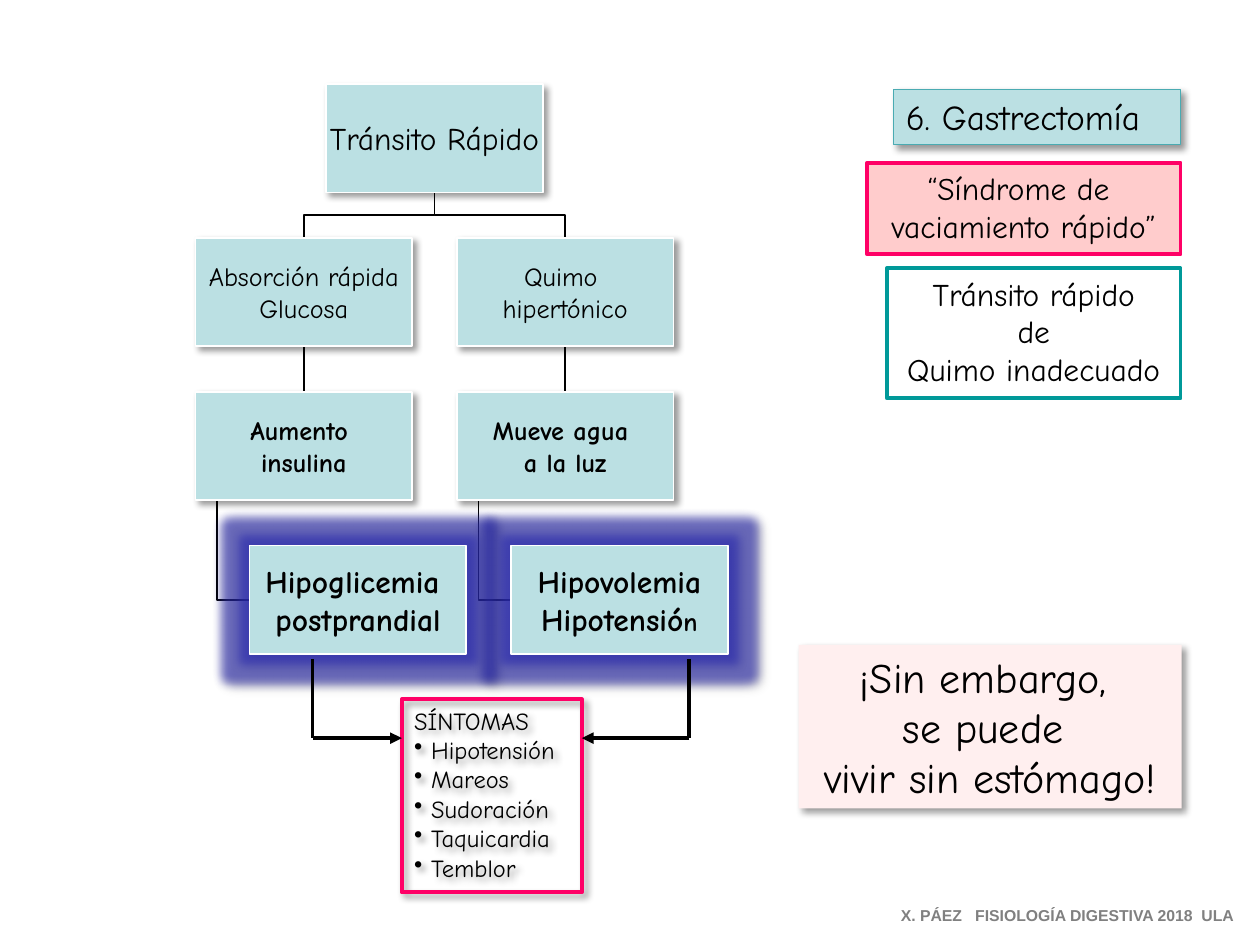
from dataclasses import dataclass
from typing import Optional

from lxml.etree import SubElement
from pptx import Presentation
from pptx.dml.color import RGBColor
from pptx.enum.shapes import MSO_CONNECTOR as Connector, MSO_SHAPE as Preset
from pptx.enum.text import MSO_ANCHOR as Anchor, MSO_AUTO_SIZE as AutoSize, PP_ALIGN as Align
from pptx.oxml.ns import qn
from pptx.util import Cm, Pt


@dataclass(frozen=True)
class Theme:
    font: str = "Comic Neue"
    footer_font: str = "Arial"
    ink: str = "000000"
    white: str = "FFFFFF"
    aqua: str = "BBE0E3"
    aqua_edge: str = "4AABB2"
    teal: str = "009999"
    pink: str = "FF0066"
    rose: str = "FFCCCC"
    blush: str = "FFEFEF"
    glow: str = "2B2BB0"
    grey: str = "808080"
    closing: float = 24
    title: float = 20
    heading: float = 18
    body: float = 15
    symptom: float = 14
    footer: float = 9
    thin: float = 1
    thick: float = 2.25


THEME = Theme()


@dataclass(frozen=True)
class Box:
    """A framed text; lengths in centimetres."""
    left: float
    top: float
    width: float
    height: float
    lines: tuple[str, ...]
    size: float
    fill: Optional[str] = None
    edge: Optional[str] = None
    edge_width: float = THEME.thick
    align: Align = Align.CENTER
    bold: bool = False
    shadow: bool = False
    glow: bool = False
    node: bool = False


def color(value: str) -> RGBColor:
    return RGBColor.from_string(value)


def add_effects(shape, shadow: bool = False, glow: bool = False) -> None:
    properties = shape._element.spPr
    effects = properties.find(qn("a:effectLst"))
    if effects is None:
        effects = SubElement(properties, qn("a:effectLst"))

    def add_effect(tag: str, value: str, alpha: int, **attributes) -> None:
        effect = SubElement(effects, qn(tag), {k: str(v) for k, v in attributes.items()})
        tint = SubElement(effect, qn("a:srgbClr"), val=value)
        SubElement(tint, qn("a:alpha"), val=str(alpha * 1000))

    if glow:
        add_effect("a:glow", THEME.glow, 60, rad=Pt(11))
    if shadow:
        add_effect("a:outerShdw", THEME.ink, 40, blurRad=Pt(4), dist=Pt(3),
                   dir=45 * 60000, algn="tl", rotWithShape=0)


def format_font(font, size: float, bold: bool = False,
                name: str = THEME.font, ink: str = THEME.ink) -> None:
    font.name, font.size, font.bold = name, Pt(size), bold
    font.color.rgb = color(ink)


def add_box(slide, box: Box):
    shape = slide.shapes.add_shape(
        Preset.RECTANGLE, Cm(box.left), Cm(box.top), Cm(box.width), Cm(box.height))
    if box.fill:
        shape.fill.solid()
        shape.fill.fore_color.rgb = color(box.fill)
    else:
        shape.fill.background()
    if box.edge:
        shape.line.color.rgb = color(box.edge)
        shape.line.width = Pt(box.edge_width)
    else:
        shape.line.fill.background()
    shape.shadow.inherit = False
    add_effects(shape, box.shadow, box.glow)

    frame = shape.text_frame
    frame.text = "\n".join(box.lines)
    frame.word_wrap = box.node
    frame.vertical_anchor = Anchor.MIDDLE if box.node else Anchor.TOP
    if box.node:
        frame.margin_left = frame.margin_right = Cm(0.03)
        frame.margin_top = frame.margin_bottom = Cm(0.03)
    else:
        frame.auto_size = AutoSize.SHAPE_TO_FIT_TEXT
    for paragraph in frame.paragraphs:
        paragraph.alignment = box.align
        for run in paragraph.runs:
            format_font(run.font, box.size, box.bold)
    return shape


def add_line(slide, start: tuple, end: tuple, width: float, arrow: bool = False) -> None:
    line = slide.shapes.add_connector(Connector.STRAIGHT, *map(Cm, start + end))
    line.line.color.rgb = color(THEME.ink)
    line.line.width = Pt(width)
    if arrow:
        SubElement(line.line._get_or_add_ln(), qn("a:tailEnd"), type="triangle")
    add_effects(line)


def add_elbow(slide, *points: tuple) -> None:
    (x, y), *others = [(Cm(x), Cm(y)) for x, y in points]
    builder = slide.shapes.build_freeform(x, y)
    builder.add_line_segments(others, close=False)
    shape = builder.convert_to_shape()
    shape.fill.background()
    shape.line.color.rgb = color(THEME.ink)
    shape.line.width = Pt(THEME.thin)
    shape.shadow.inherit = False


# Tree grid
NODE_W, NODE_H = 4.37, 2.18
LEFT, TOP = 3.94, 1.7
COLUMN_STEP, ROW_STEP = 5.27, 3.1
GAP = ROW_STEP - NODE_H
ROOT_LEFT = LEFT + COLUMN_STEP / 2
LEAF_SHIFT = NODE_W / 4


def add_node(slide, left: float, row: int, lines: tuple, size: float,
             bold: bool = False, glow: bool = False):
    return add_box(slide, Box(left, TOP + row * ROW_STEP, NODE_W, NODE_H, lines, size,
                              THEME.aqua, THEME.white, THEME.thin, bold=bold,
                              shadow=True, glow=glow, node=True))


def add_branch_lines(slide, left: float) -> None:
    middle, root_middle = left + NODE_W / 2, ROOT_LEFT + NODE_W / 2
    root_bottom, child_bottom, cause_bottom = (TOP + NODE_H + row * ROW_STEP for row in range(3))
    fork = root_bottom + GAP / 2
    add_elbow(slide, (root_middle, root_bottom), (root_middle, fork),
              (middle, fork), (middle, root_bottom + GAP))
    add_line(slide, (middle, child_bottom), (middle, child_bottom + GAP), THEME.thin)
    stem, leaf_middle = left + NODE_W / 10, cause_bottom + GAP + NODE_H / 2
    add_elbow(slide, (stem, cause_bottom), (stem, leaf_middle), (left + LEAF_SHIFT, leaf_middle))


def main() -> None:
    presentation = Presentation()
    presentation.slide_width, presentation.slide_height = Cm(25.4), Cm(19.05)
    slide = presentation.slides.add_slide(presentation.slide_layouts[6])

    # Side messages
    for box in (
        Box(18.01, 1.8, 5.79, 1.12, ("6. Gastrectomía",), THEME.title, THEME.aqua,
            THEME.aqua_edge, 0.75, Align.LEFT, shadow=True),
        Box(17.88, 5.41, 5.92, 2.62, ("Tránsito rápido", "de", "Quimo inadecuado"),
            THEME.heading, edge=THEME.teal),
        Box(17.48, 3.28, 6.32, 1.85, ("“Síndrome de ", "vaciamiento rápido”"),
            THEME.heading, THEME.rose, THEME.pink),
        Box(16.1, 13, 7.72, 3.3, ("¡Sin embargo, ", "se puede ", "vivir sin estómago!"),
            THEME.closing, THEME.blush, shadow=True),
    ):
        add_box(slide, box)

    # Tree
    branches = (
        (("Absorción rápida", "Glucosa"), ("Aumento ", "insulina"),
         ("Hipoglicemia ", "postprandial")),
        (("Quimo ", "hipertónico"), ("Mueve agua ", "a la luz"),
         ("Hipovolemia", "Hipotensió")),
    )
    lefts = [LEFT + column * COLUMN_STEP for column in range(len(branches))]
    for left in lefts:
        add_branch_lines(slide, left)
    add_node(slide, ROOT_LEFT, 0, ("Tránsito Rápido",), THEME.heading)
    for left, (child, cause, effect) in zip(lefts, branches):
        add_node(slide, left, 1, child, THEME.body)
        add_node(slide, left, 2, cause, THEME.body, bold=True)
        leaf = add_node(slide, left + LEAF_SHIFT, 3, effect, THEME.heading, bold=True, glow=True)
    # The last letter of the last leaf is smaller
    last_letter = leaf.text_frame.paragraphs[-1].add_run()
    last_letter.text = "n"
    format_font(last_letter.font, THEME.body, bold=True)

    # Symptoms
    symptoms = Box(8.1, 14.1, 3.63, 3.89,
                   ("SÍNTOMAS", "Hipotensión", "Mareos", "Sudoración", "Taquicardia", "Temblor"),
                   THEME.symptom, edge=THEME.pink, align=Align.LEFT, shadow=True)
    for paragraph in add_box(slide, symptoms).text_frame.paragraphs[1:]:
        properties = paragraph._p.get_or_add_pPr()
        properties.set("marL", str(Cm(0.34)))
        properties.set("indent", str(-Cm(0.34)))
        SubElement(properties, qn("a:buChar"), char="•")
    for x, target in ((6.3, symptoms.left), (13.89, symptoms.left + symptoms.width)):
        add_line(slide, (x, 13.28), (x, 14.88), THEME.thick)
        add_line(slide, (x, 14.88), (target, 14.88), THEME.thick, arrow=True)

    # Footer
    footer = slide.shapes.add_textbox(Cm(17.91), Cm(18.14), Cm(7.26), Cm(0.64))
    footer.text_frame.text = "X. PÁEZ   FISIOLOGÍA DIGESTIVA 2018  ULA"
    footer.text_frame.word_wrap = False
    footer.text_frame.auto_size = AutoSize.SHAPE_TO_FIT_TEXT
    format_font(footer.text_frame.paragraphs[0].runs[0].font, THEME.footer, True,
                THEME.footer_font, THEME.grey)

    presentation.save("out.pptx")


if __name__ == "__main__":
    main()
